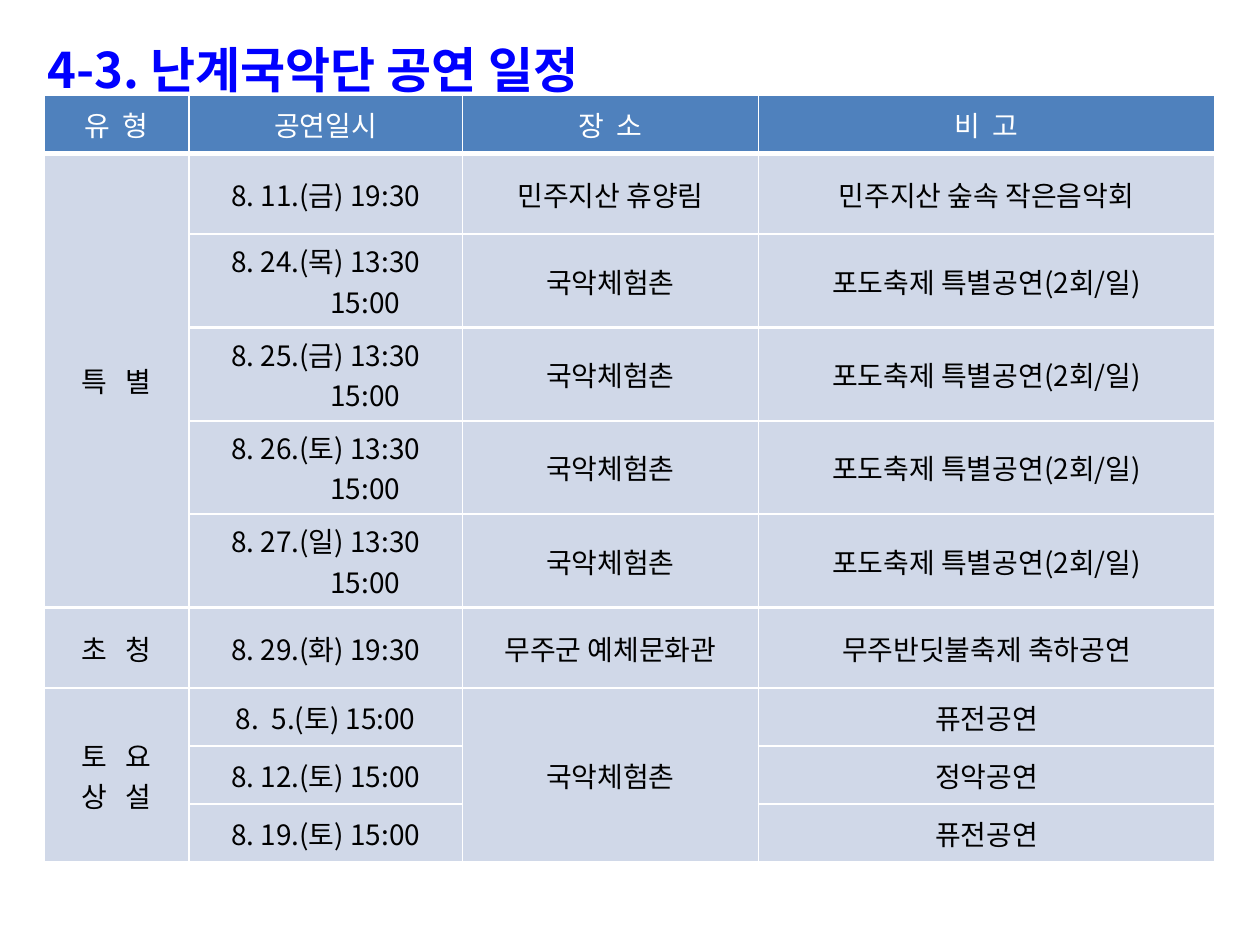
from lxml import etree
from pptx import Presentation
from pptx.dml.color import RGBColor
from pptx.enum.text import MSO_ANCHOR, MSO_AUTO_SIZE, PP_ALIGN
from pptx.oxml.ns import qn
from pptx.util import Inches, Pt

LEFT, CENTER = PP_ALIGN.LEFT, PP_ALIGN.CENTER
TOP, MIDDLE = MSO_ANCHOR.TOP, MSO_ANCHOR.MIDDLE
NO_FIT = MSO_AUTO_SIZE.NONE
FONT = "Noto Sans CJK KR"
WHITE, BLACK, BLUE = "FFFFFF", "000000", "0000FF"
HEADER_FILL, BODY_FILL = "4F81BD", "D0D8E8"
COLUMNS = [1.15, 2.17, 2.35, 3.62]
ROWS = [0.46] + [0.64] * 6 + [0.46] * 3
ROW_LINES = [1, 3] + [1.5] * 6 + [1] * 3
MERGES = [(1, 0, 5), (7, 0, 3), (7, 2, 3)]
SECOND_TIME_INDENT = 0.63
VENUE = "국악체험촌"
FESTIVAL_DAYS = ["24.(목)", "25.(금)", "26.(토)", "27.(일)"]
SCHEDULE = [
    ["유 형", "공연일시", "장 소", "비 고"],
    ["특 별", "8. 11.(금) 19:30", "민주지산 휴양림", "민주지산 숲속 작은음악회"],
    *[["", f"8. {day} 13:30\n15:00", VENUE, "포도축제 특별공연(2회/일)"]
      for day in FESTIVAL_DAYS],
    ["초 청", "8. 29.(화) 19:30", "무주군 예체문화관", "무주반딧불축제 축하공연"],
    ["토 요\n상 설", "8.  5.(토) 15:00", VENUE, "퓨전공연"],
    ["", "8. 12.(토) 15:00", "", "정악공연"],
    ["", "8. 19.(토) 15:00", "", "퓨전공연"],
]


def color(value):
    """Turn a hex string into a colour."""
    return RGBColor.from_string(value)


def add_span(para, text, size, fill, bold=False, spacing=0):
    """Add one formatted run to a paragraph."""
    span = para.add_run()
    span.text = text
    span.font.size = Pt(size)
    span.font.bold = bold
    span.font.color.rgb = color(fill)
    span.font.name = FONT
    props = span.font._element
    etree.SubElement(props, qn("a:ea"), typeface=FONT)
    if spacing:
        props.set("spc", str(round(spacing * 100)))


def indent(para, margin, first=0):
    """Set the left margin and first-line indent in inches."""
    props = para._p.get_or_add_pPr()
    props.set("marL", str(Inches(margin)))
    props.set("indent", str(Inches(first)))


def add_title(page, text):
    """Place and format the slide title."""
    box = page.shapes.title
    box.left, box.top = Inches(0.28), Inches(0.08)
    box.width, box.height = Inches(9.61), Inches(0.9)
    frame = box.text_frame
    frame.auto_size, frame.word_wrap = NO_FIT, True
    frame.vertical_anchor = TOP
    para = frame.paragraphs[0]
    para.alignment, para.line_spacing = LEFT, 1.4
    indent(para, 0.58, -0.58)
    add_span(para, text, 28, BLUE, bold=True)


def set_borders(cell, top, bottom):
    """Draw white cell borders with the given top and bottom widths."""
    props = cell._tc.get_or_add_tcPr()
    for side, width in zip("LRTB", (1, 1, top, bottom)):
        line = etree.SubElement(props, qn(f"a:ln{side}"), w=str(Pt(width)))
        fill = etree.SubElement(line, qn("a:solidFill"))
        etree.SubElement(fill, qn("a:srgbClr"), val=WHITE)


def fill_cell(cell, text, row, column):
    """Write and format one table cell."""
    span_rows = cell.span_height if cell.is_merge_origin else 1
    set_borders(cell, ROW_LINES[row], ROW_LINES[row + span_rows])
    cell.fill.solid()
    cell.fill.fore_color.rgb = color(BODY_FILL if row else HEADER_FILL)
    cell.vertical_anchor = MIDDLE
    spacing = 0
    if column == 0 or row == 0 and " " in text:
        spacing = 3.6 if row else 1.8
    for number, line in enumerate(text.split("\n")):
        frame = cell.text_frame
        para = frame.add_paragraph() if number else frame.paragraphs[0]
        para.alignment = CENTER
        if number and column == 1:
            indent(para, SECOND_TIME_INDENT)
        add_span(para, line, 16, BLACK if row else WHITE, spacing=spacing)


def add_schedule(page):
    """Add the performance table."""
    frame = page.shapes.add_table(
        len(ROWS), len(COLUMNS), Inches(0.35), Inches(0.76),
        Inches(sum(COLUMNS)), Inches(sum(ROWS)))
    table = frame.table
    for column, width in zip(table.columns, COLUMNS):
        column.width = Inches(width)
    for row, height in zip(table.rows, ROWS):
        row.height = Inches(height)
    for row, column, count in MERGES:
        table.cell(row, column).merge(table.cell(row + count - 1, column))
    for row, texts in enumerate(SCHEDULE):
        for column, text in enumerate(texts):
            cell = table.cell(row, column)
            if not cell.is_spanned:
                fill_cell(cell, text, row, column)


def main():
    """Build and save the slide."""
    deck = Presentation()
    deck.slide_width, deck.slide_height = Inches(10), Inches(7.5)
    page = deck.slides.add_slide(deck.slide_layouts[5])
    add_title(page, "4-3. 난계국악단 공연 일정")
    add_schedule(page)
    deck.save("out.pptx")


if __name__ == "__main__":
    main()
